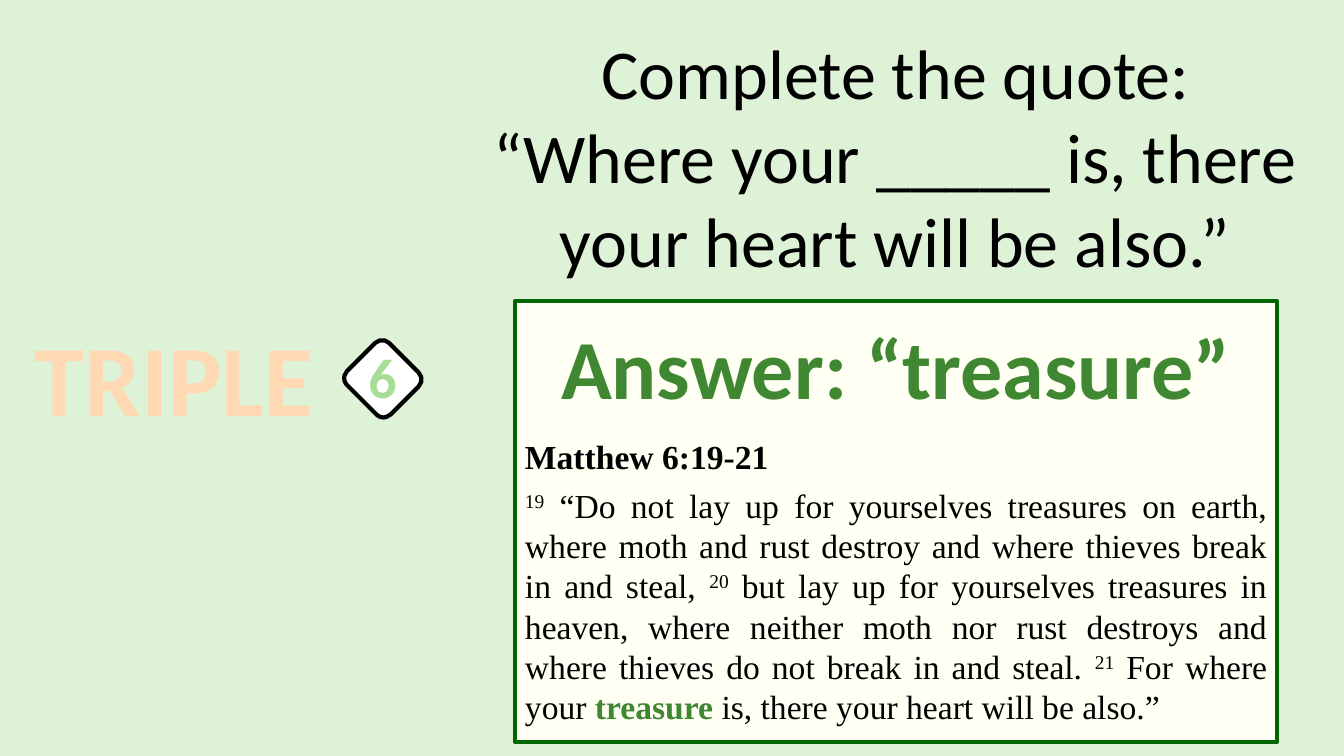
from dataclasses import dataclass

import pptx
import pptx.dml.color
import pptx.enum.shapes
import pptx.enum.text
import pptx.oxml
import pptx.oxml.ns
import pptx.util
import pptx.shapes.autoshape
import pptx.slide
import pptx.text.text

Pt = pptx.util.Pt
ALIGN = pptx.enum.text.PP_ALIGN
ANCHOR = pptx.enum.text.MSO_ANCHOR
SHAPE = pptx.enum.shapes.MSO_SHAPE


@dataclass(frozen=True)
class Theme:
    background: str = "DDF2D6"
    black: str = "000000"
    white: str = "FFFFFF"
    badge_green: str = "A8DD97"
    answer_green: str = "3F8731"
    card_border: str = "006600"
    card_fill: str = "FFFFF3"
    triple_orange: str = "FFD9B3"
    sans: str = "Calibri"
    serif: str = "Times New Roman"
    triple_size: float = 72
    badge_size: float = 40
    question_size: float = 50
    answer_size: float = 60
    verse_size: float = 24
    border: float = 3
    digit_outline: float = 2.25


THEME = Theme()


@dataclass(frozen=True)
class Box:
    left: float
    top: float
    width: float
    height: float


@dataclass(frozen=True)
class Run:
    text: str
    color: str | None = None
    bold: bool | None = None
    superscript: bool = False
    outline: float = 0
    break_before: bool = False


@dataclass(frozen=True)
class Paragraph:
    runs: tuple[Run, ...]
    size: float
    font: str = THEME.sans
    color: str = THEME.black
    bold: bool = False
    align: ALIGN = ALIGN.CENTER
    line_spacing: float | None = None
    before: float = 0
    after: float = 0


@dataclass(frozen=True)
class Label:
    box: Box
    paragraph: Paragraph
    wrap: bool = True


@dataclass(frozen=True)
class Panel:
    box: Box
    kind: SHAPE
    fill: str
    border: str
    rotation: float = 0


def rgb(color: str) -> pptx.dml.color.RGBColor:
    return pptx.dml.color.RGBColor.from_string(color)


def add_run(paragraph: pptx.text.text._Paragraph, content: Run) -> None:
    if content.break_before:
        paragraph.add_line_break()
    run = paragraph.add_run()
    run.text = content.text
    if content.color:
        run.font.color.rgb = rgb(content.color)
    if content.bold is not None:
        run.font.bold = content.bold
    properties = run._r.get_or_add_rPr()
    if content.superscript:
        properties.set("baseline", "30000")
    if content.outline:
        properties.insert(0, pptx.oxml.parse_xml(
            f'<a:ln {pptx.oxml.ns.nsdecls("a")} w="{int(Pt(content.outline))}">'
            f'<a:solidFill><a:srgbClr val="{THEME.black}"/></a:solidFill></a:ln>'))


def write(frame: pptx.text.text.TextFrame, paragraphs: tuple[Paragraph, ...]) -> None:
    for index, content in enumerate(paragraphs):
        paragraph = frame.add_paragraph() if index else frame.paragraphs[0]
        paragraph.alignment = content.align
        paragraph.line_spacing = content.line_spacing
        paragraph.space_before = Pt(content.before)
        paragraph.space_after = Pt(content.after)
        paragraph.font.name = content.font
        paragraph.font.size = Pt(content.size)
        paragraph.font.bold = content.bold
        paragraph.font.color.rgb = rgb(content.color)
        for run in content.runs:
            # Runs carry the paragraph's look unless they name their own
            add_run(paragraph, run)


def place(box: Box) -> tuple[Pt, Pt, Pt, Pt]:
    return Pt(box.left), Pt(box.top), Pt(box.width), Pt(box.height)


def add_panel(slide: pptx.slide.Slide, panel: Panel) -> pptx.shapes.autoshape.Shape:
    shape = slide.shapes.add_shape(panel.kind, *place(panel.box))
    shape.shadow.inherit = False
    shape.rotation = panel.rotation
    shape.fill.solid()
    shape.fill.fore_color.rgb = rgb(panel.fill)
    shape.line.color.rgb = rgb(panel.border)
    shape.line.width = Pt(THEME.border)
    return shape


def add_label(slide: pptx.slide.Slide, label: Label) -> None:
    frame = slide.shapes.add_textbox(*place(label.box)).text_frame
    frame.word_wrap = label.wrap
    write(frame, (label.paragraph,))


BADGE = Panel(Box(251.5, 249.3, 43.9, 42.5), SHAPE.ROUNDED_RECTANGLE,
              THEME.white, THEME.black, rotation=45)
CARD = Panel(Box(367.9, 215.3, 544.3, 314.6), SHAPE.RECTANGLE,
             THEME.card_fill, THEME.card_border)
CARD_TOP_INSET = 16.6

LABELS = (
    Label(Box(9.6, 221.8, 230, 95),
          Paragraph((Run("TRIPLE"),), THEME.triple_size,
                    color=THEME.triple_orange, bold=True)),
    Label(Box(255.6, 241.2, 35.3, 55.4),
          Paragraph((Run("6", outline=THEME.digit_outline),), THEME.badge_size,
                    color=THEME.badge_green, bold=True),
          wrap=False),
    Label(Box(337.7, 17.4, 604.1, 189.4),
          Paragraph((Run("Complete the quote:"),
                     Run("“Where your _____ is, there your heart will be also.”",
                         break_before=True)),
                    THEME.question_size)),
)

ANSWER = (
    Paragraph((Run("Answer: “treasure”"),), THEME.answer_size,
              color=THEME.answer_green, bold=True, line_spacing=0.8),
    Paragraph((Run("Matthew 6:19-21"),), THEME.verse_size, THEME.serif,
              bold=True, align=ALIGN.LEFT, before=14.4, after=6),
    Paragraph((
        Run("19", superscript=True),
        Run(" “Do not lay up for yourselves treasures on earth, where moth and rust "
            "destroy and where thieves break in and steal, "),
        Run("20", superscript=True),
        Run(" but lay up for yourselves treasures in heaven, where neither moth nor "
            "rust destroys and where thieves do not break in and steal. "),
        Run("21", superscript=True),
        Run(" For where your "),
        Run("treasure", color=THEME.answer_green, bold=True),
        Run(" is, there your heart will be also.”"),
    ), THEME.verse_size, THEME.serif, align=ALIGN.JUSTIFY),
)


def main() -> None:
    presentation = pptx.Presentation()
    presentation.slide_width, presentation.slide_height = Pt(960), Pt(540)
    slide = presentation.slides.add_slide(presentation.slide_layouts[6])
    slide.background.fill.solid()
    slide.background.fill.fore_color.rgb = rgb(THEME.background)

    # Numbered badge, with the labels above it
    add_panel(slide, BADGE)
    for label in LABELS:
        add_label(slide, label)

    # Answer card
    frame = add_panel(slide, CARD).text_frame
    frame.word_wrap = True
    frame.vertical_anchor = ANCHOR.MIDDLE
    frame.margin_top = Pt(CARD_TOP_INSET)
    write(frame, ANSWER)

    presentation.save("out.pptx")


if __name__ == "__main__":
    main()
